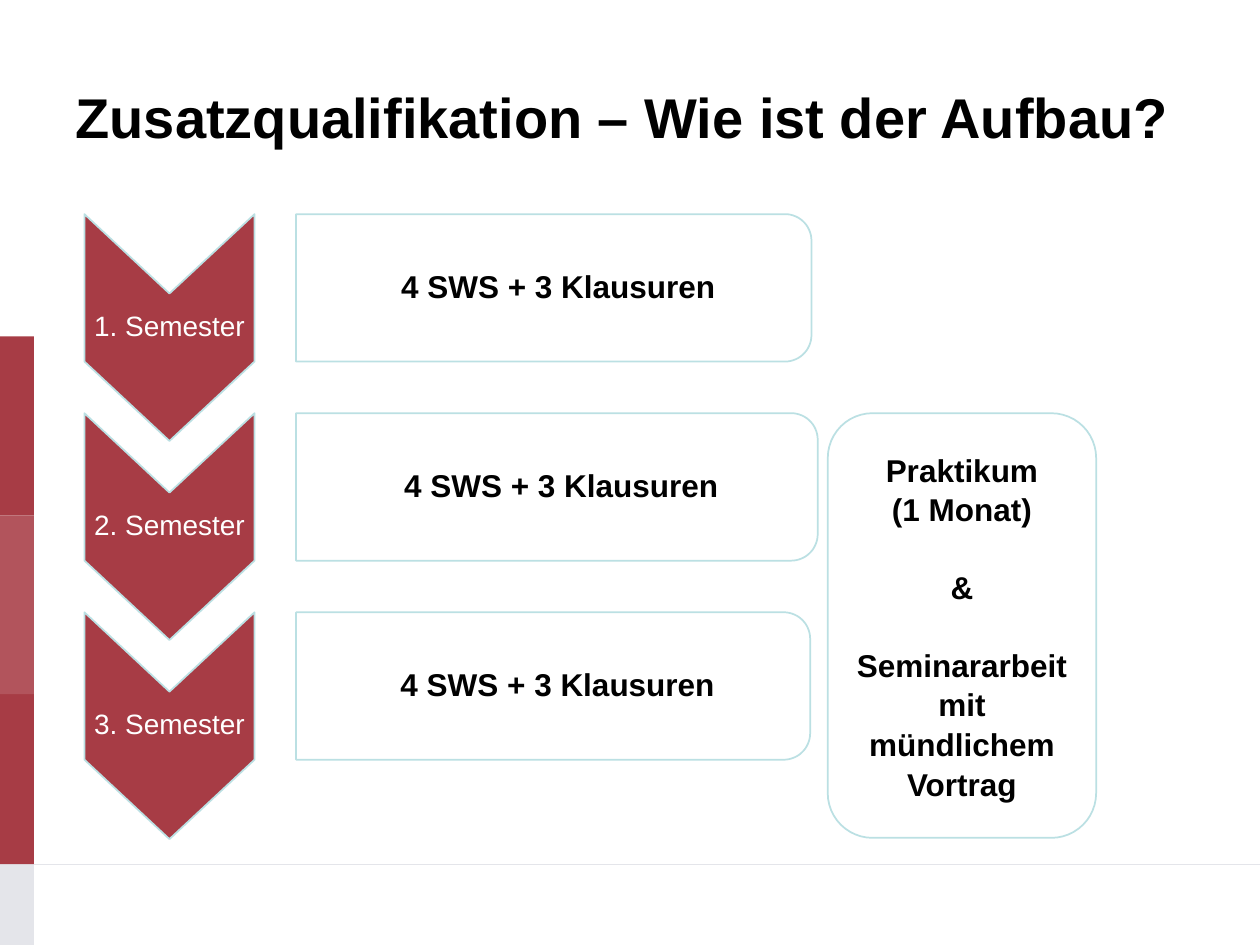
from math import cos, radians, sin

from lxml import etree
from pptx import Presentation
from pptx.dml.color import RGBColor
from pptx.enum.shapes import MSO_CONNECTOR, MSO_SHAPE
from pptx.enum.text import MSO_ANCHOR, PP_ALIGN
from pptx.oxml.ns import qn
from pptx.util import Inches, Pt

RECTANGLE = MSO_SHAPE.RECTANGLE
ROUNDED = MSO_SHAPE.ROUNDED_RECTANGLE
STRAIGHT = MSO_CONNECTOR.STRAIGHT
MIDDLE = MSO_ANCHOR.MIDDLE
LEFT, CENTER = PP_ALIGN.LEFT, PP_ALIGN.CENTER

COLORS = {"red": "A73C45", "light_red": "B2545C", "gray": "E4E5EA",
          "outline": "BBE0E3", "white": "FFFFFF", "black": "000000"}
FONT = "Arial"
TITLE = "Zusatzqualifikation – Wie ist der Aufbau?"
COURSEWORK = "4 SWS + 3 Klausuren"
BOX_WIDTHS = [4.09, 4.14, 4.08]
FIRST_TOP, ROW_PITCH, ROW_HEIGHT = 1.7, 1.58, 1.17
CHEVRON_LEFT, CHEVRON_WIDTH, CHEVRON_TIP = 0.67, 1.35, 0.63
BOX_LEFT, CORNER = 2.35, 0.21
# Text, and the space before it in points
PROJECT_LINES = [("Praktikum", 0), ("(1 Monat)", 0), ("&", 21.7),
                 ("Seminararbeit mit mündlichem Vortrag", 21.7)]


def color(name):
    return RGBColor.from_string(COLORS[name])


def style_shape(shape, fill=None, line=None):
    shape.shadow.inherit = False
    if fill:
        shape.fill.solid()
        shape.fill.fore_color.rgb = color(fill)
    else:
        shape.fill.background()
    if line:
        shape.line.color.rgb = color(line)
        shape.line.width = Pt(1)
    else:
        shape.line.fill.background()


def style_paragraph(para, size, name, bold, align=CENTER):
    para.alignment = align
    para.font.name = FONT
    para.font.size = Pt(size)
    para.font.bold = bold
    para.font.color.rgb = color(name)


def set_frame(frame, insets):
    frame.word_wrap = True
    frame.vertical_anchor = MIDDLE
    (frame.margin_left, frame.margin_top,
     frame.margin_right, frame.margin_bottom) = map(Inches, insets)


def add_outline(page, points, fill, text, size, name, bold, insets):
    corners = [(Inches(x), Inches(y)) for x, y in points]
    builder = page.shapes.build_freeform(*corners[0], scale=1.0)
    builder.add_line_segments(corners[1:], close=True)
    shape = builder.convert_to_shape()
    style_shape(shape, fill, "outline")
    set_frame(shape.text_frame, insets)
    para = shape.text_frame.paragraphs[0]
    para.text = text
    para.line_spacing = 0.9
    style_paragraph(para, size, name, bold)


def add_chevron(page, top, text):
    left, right = CHEVRON_LEFT, CHEVRON_LEFT + CHEVRON_WIDTH
    middle, bottom = (left + right) / 2, top + ROW_HEIGHT
    points = [(left, top), (middle, top + CHEVRON_TIP), (right, top),
              (right, bottom), (middle, bottom + CHEVRON_TIP), (left, bottom)]
    add_outline(page, points, "red", text, 16, "white", False,
                (0.01, 0.64, 0.01, 0.64))


def add_coursework_box(page, top, width):
    """Box whose two right corners are rounded."""
    right, bottom = BOX_LEFT + width, top + ROW_HEIGHT
    points = [(BOX_LEFT, bottom), (BOX_LEFT, top)]
    for center_y, start in [(top + CORNER, -90), (bottom - CORNER, 0)]:
        for angle in range(start, start + 91, 6):
            points.append((right - CORNER + CORNER * cos(radians(angle)),
                           center_y + CORNER * sin(radians(angle))))
    add_outline(page, points, "white", COURSEWORK, 18, "black", True,
                (0.14, 0.07, 0.07, 0.07))


def add_project_box(page):
    box = page.shapes.add_shape(ROUNDED, Inches(6.57), Inches(3.28),
                                Inches(2.13), Inches(3.37))
    style_shape(box, line="outline")
    frame = box.text_frame
    set_frame(frame, (0.1, 0.05, 0.1, 0.05))
    for index, (text, space) in enumerate(PROJECT_LINES):
        para = frame.add_paragraph() if index else frame.paragraphs[0]
        para.text = text
        para.line_spacing = 1.05
        para.space_before = Pt(space)
        style_paragraph(para, 18, "black", True)


def add_decoration(page):
    rule = page.shapes.add_connector(STRAIGHT, 0, Inches(6.86),
                                     Inches(10), Inches(6.86))
    rule.line.color.rgb = color("gray")
    rule.line.width = Pt(0.5)
    properties = rule._element.find(qn("p:spPr"))
    etree.SubElement(properties, qn("a:effectLst"))
    for top, height, fill in [(2.67, 1.42, "red"), (5.51, 1.35, "red"),
                              (6.86, 0.64, "gray"), (4.09, 1.42, "light_red")]:
        panel = page.shapes.add_shape(RECTANGLE, 0, Inches(top),
                                      Inches(0.27), Inches(height))
        style_shape(panel, fill)


def add_title(page):
    title = page.shapes.title
    title.left, title.top = Inches(0.5), Inches(0.3)
    title.width, title.height = Inches(9), Inches(1.25)
    set_frame(title.text_frame, (0.1, 0.05, 0.1, 0.05))
    para = title.text_frame.paragraphs[0]
    para.text = TITLE
    style_paragraph(para, 32, "black", True, LEFT)


def main():
    deck = Presentation()
    deck.slide_width, deck.slide_height = Inches(10), Inches(7.5)
    page = deck.slides.add_slide(deck.slide_layouts[5])
    # Side panels, footer rule and title
    add_decoration(page)
    add_title(page)
    # One row per semester
    for index, width in enumerate(BOX_WIDTHS):
        top = FIRST_TOP + index * ROW_PITCH
        add_chevron(page, top, f"{index + 1}. Semester")
        add_coursework_box(page, top, width)
    # Internship and paper beside semesters 2 and 3
    add_project_box(page)
    deck.save("out.pptx")


if __name__ == "__main__":
    main()
